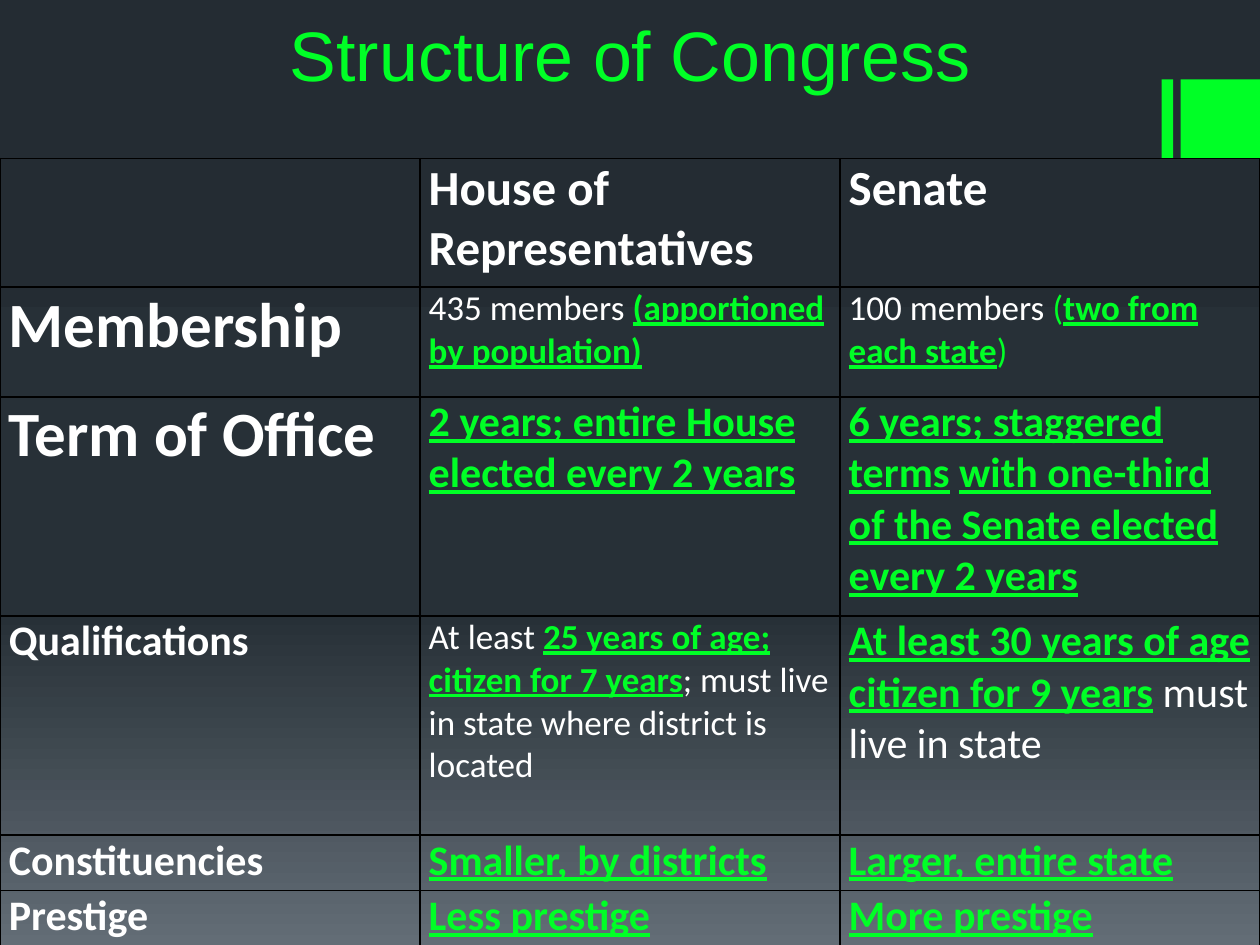
from copy import deepcopy

from lxml import etree
from pptx import Presentation
from pptx.dml.color import RGBColor
from pptx.enum.shapes import MSO_SHAPE as SHAPE
from pptx.enum.text import MSO_ANCHOR as ANCHOR, PP_ALIGN as ALIGN
from pptx.oxml.ns import qn
from pptx.util import Inches, Pt

GREEN = RGBColor(0x00, 0xFF, 0x26)
WHITE = RGBColor(0xFF, 0xFF, 0xFF)
BLACK = RGBColor(0x00, 0x00, 0x00)
BACKGROUND = [
    (0, RGBColor(0x24, 0x2C, 0x33)),
    (0.65, RGBColor(0x27, 0x30, 0x37)),
    (1, RGBColor(0x63, 0x6D, 0x76)),
]

PLAIN = (WHITE, False, False)
BOLD = (WHITE, True, False)
KEY = (GREEN, True, True)
LIGHT_KEY = (GREEN, False, False)

ROW_HEIGHTS = [1.02, 0.87, 1.74, 1.74, 0.44, 0.44]
ROWS = [
    [
        (28, []),
        (28, [("House of Representatives", BOLD)]),
        (28, [("Senate", BOLD)]),
    ],
    [
        (36, [("Membership", BOLD)]),
        (20, [("435 members ", PLAIN), ("(apportioned by population)", KEY)]),
        (20, [("100 members ", PLAIN), ("(", LIGHT_KEY),
              ("two from each state", KEY), (")", LIGHT_KEY)]),
    ],
    [
        (36, [("Term of Office", BOLD)]),
        (24, [("2 years; entire House elected every 2 years", KEY)]),
        (24, [("6 years; staggered terms", KEY), (" ", LIGHT_KEY),
              ("with one-third of the Senate elected every 2 years", KEY)]),
    ],
    [
        (24, [("Qualifications", BOLD)]),
        (20, [("At least ", PLAIN), ("25 years of age; citizen for 7 years", KEY),
              ("; must live in state where district is located", PLAIN)]),
        (24, [("At least 30 years of age citizen for 9 years", KEY),
              (" ", LIGHT_KEY), ("must live in state", PLAIN)]),
    ],
    [
        (24, [("Constituencies", BOLD)]),
        (24, [("Smaller, by districts", KEY)]),
        (24, [("Larger, entire state", KEY)]),
    ],
    [
        (24, [("Prestige", BOLD)]),
        (24, [("Less prestige", KEY)]),
        (24, [("More prestige", KEY)]),
    ],
]


def add_borders(cell):
    tcPr = cell._tc.get_or_add_tcPr()
    for side in ("a:lnL", "a:lnR", "a:lnT", "a:lnB"):
        ln = etree.SubElement(tcPr, qn(side), w=str(Pt(1)))
        fill = etree.SubElement(ln, qn("a:solidFill"))
        etree.SubElement(fill, qn("a:srgbClr"), val=str(BLACK))


prs = Presentation()
prs.slide_width = Inches(10)
prs.slide_height = Inches(7.5)
s = prs.slides.add_slide(prs.slide_layouts[5])

fill = s.background.fill
fill.gradient()
fill.gradient_angle = 270
stops = s._element.find(".//" + qn("a:gsLst"))
stops.append(deepcopy(stops[-1]))
for stop, (position, color) in zip(fill.gradient_stops, BACKGROUND):
    stop.position = position
    stop.color.rgb = color

for left, width in ((9.22, 0.09), (9.37, 0.63)):
    sp = s.shapes.add_shape(SHAPE.RECTANGLE, Inches(left), Inches(0.63),
                            Inches(width), Inches(0.63))
    sp.shadow.inherit = False
    sp.fill.solid()
    sp.fill.fore_color.rgb = GREEN
    sp.line.fill.background()

title = s.shapes.title
title.left, title.top = Inches(0), Inches(0)
title.width, title.height = Inches(10), Inches(0.81)
tf = title.text_frame
tf.text = "Structure of Congress"
tf.vertical_anchor = ANCHOR.BOTTOM
p = tf.paragraphs[0]
p.alignment = ALIGN.CENTER
p.font.name = "Arial"
p.font.size = Pt(40)
p.font.color.rgb = GREEN

table = s.shapes.add_table(len(ROWS), 3, Inches(0), Inches(1.26),
                           Inches(10), Inches(6.24)).table
table.first_row = False
table.horz_banding = False
for row, height in zip(table.rows, ROW_HEIGHTS):
    row.height = Inches(height)

for row, contents in zip(table.rows, ROWS):
    for cell, (size, parts) in zip(row.cells, contents):
        add_borders(cell)
        cell.fill.background()
        cell.margin_left = cell.margin_right = Inches(0.07)
        cell.margin_top = cell.margin_bottom = Inches(0)
        p = cell.text_frame.paragraphs[0]
        for text, (color, bold, underline) in parts:
            r = p.add_run()
            r.text = text
            r.font.name = "Calibri"
            r.font.size = Pt(size)
            r.font.color.rgb = color
            r.font.bold = bold
            r.font.underline = underline

prs.save("out.pptx")
